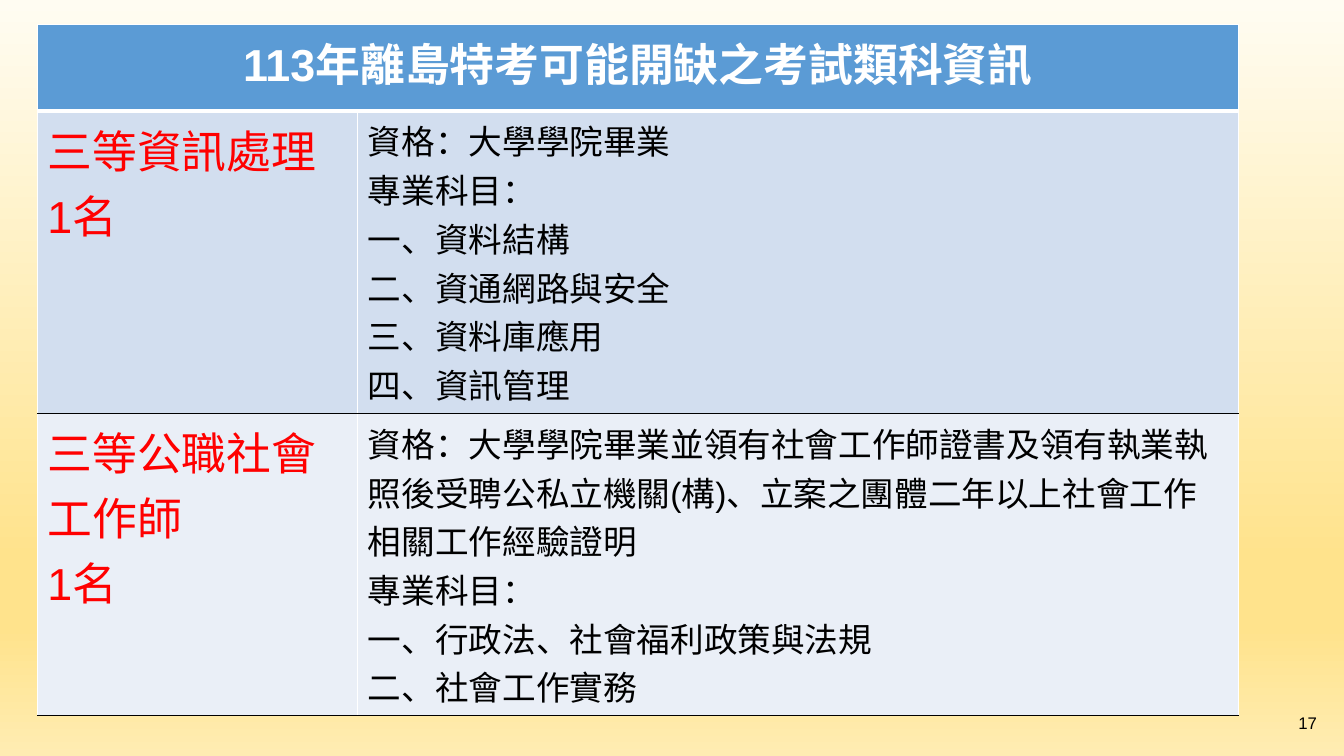
from dataclasses import dataclass

from lxml.etree import SubElement
from pptx import Presentation
from pptx.dml.color import RGBColor
from pptx.enum.text import MSO_ANCHOR, PP_ALIGN
from pptx.oxml import parse_xml
from pptx.oxml.ns import nsdecls, qn
from pptx.util import Inches, Pt


@dataclass(frozen=True)
class Theme:
    font: str = "Arial"
    heading_size: int = 32
    detail_size: int = 24
    number_size: int = 12
    white: str = "FFFFFF"
    black: str = "000000"
    red: str = "FF0000"
    header_fill: str = "5B9BD5"
    row_fills: tuple = ("D2DEEF", "EAEFF7")
    background: tuple = ((0, "FFFCF2"), (74, "FFE38C"), (83, "FFE38C"), (100, "FFECB2"))


TITLE = "113年離島特考可能開缺之考試類科資訊"
EXAMS = [
    (
        ["三等資訊處理", "1名"],
        ["資格：大學學院畢業", "專業科目：", "一、資料結構", "二、資通網路與安全",
         "三、資料庫應用", "四、資訊管理"],
    ),
    (
        ["三等公職社會工作師", "1名"],
        ["資格：大學學院畢業並領有社會工作師證書及領有執業執照後受聘公私立機關(構)、"
         "立案之團體二年以上社會工作相關工作經驗證明",
         "專業科目：", "一、行政法、社會福利政策與法規", "二、社會工作實務"],
    ),
]


class SlideBuilder:
    """Places elements on one slide; lengths are percentages of its size."""

    def __init__(self, presentation, theme):
        self.theme = theme
        self.width = presentation.slide_width
        self.height = presentation.slide_height
        self.slide = presentation.slides.add_slide(presentation.slide_layouts[6])

    def across(self, percent):
        return round(self.width * percent / 100)

    def down(self, percent):
        return round(self.height * percent / 100)

    def frame(self, left, top, width, height):
        return self.across(left), self.down(top), self.across(width), self.down(height)

    def background(self):
        fill = self.slide.background.fill
        fill.gradient()
        fill.gradient_angle = 270
        stops = next(self.slide.element.iter(qn("a:gsLst")))
        for stop in list(stops):
            stops.remove(stop)
        for position, color in self.theme.background:
            stop = SubElement(stops, qn("a:gs"), pos=str(position * 1000))
            SubElement(stop, qn("a:srgbClr"), val=color)

    def add_lines(self, text_frame, lines, size, color, align=PP_ALIGN.LEFT, bold=False):
        text_frame.word_wrap = True
        for index, line in enumerate(lines):
            paragraph = text_frame.add_paragraph() if index else text_frame.paragraphs[0]
            paragraph.alignment = align
            run = paragraph.add_run()
            run.text = line
            run.font.name = self.theme.font
            run.font.size = Pt(size)
            run.font.bold = bold
            run.font.color.rgb = RGBColor.from_string(color)

    def text(self, lines, frame, size, color, align):
        shape = self.slide.shapes.add_textbox(*self.frame(*frame))
        shape.text_frame.vertical_anchor = MSO_ANCHOR.MIDDLE
        self.add_lines(shape.text_frame, lines, size, color, align)

    def table(self, left, top, column_widths, row_heights):
        frame = self.frame(left, top, sum(column_widths), sum(row_heights))
        table = self.slide.shapes.add_table(
            len(row_heights), len(column_widths), *frame).table
        table.first_row = table.horz_banding = False
        for column, width in zip(table.columns, column_widths):
            column.width = self.across(width)
        for row, height in zip(table.rows, row_heights):
            row.height = self.down(height)
        return table

    def style_cell(self, cell, fill, top, bottom):
        """Fill a cell and border it; top and bottom are (color, points)."""
        cell.fill.solid()
        cell.fill.fore_color.rgb = RGBColor.from_string(fill)
        properties = cell._tc.get_or_add_tcPr()
        side = (self.theme.white, 1)
        borders = {"lnL": side, "lnR": side, "lnT": top, "lnB": bottom}
        for index, (tag, (color, points)) in enumerate(borders.items()):
            properties.insert(index, parse_xml(
                f'<a:{tag} {nsdecls("a")} w="{Pt(points)}"><a:solidFill>'
                f'<a:srgbClr val="{color}"/></a:solidFill></a:{tag}>'))

    def exam_table(self, title, exams):
        theme = self.theme
        table = self.table(2.78, 3.2, (23.85, 65.55), (11.47, 40, 40))
        thin_white, thick_white = (theme.white, 1), (theme.white, 3)
        rule = (theme.black, 1)

        for cell in table.rows[0].cells:
            self.style_cell(cell, theme.header_fill, thin_white, thick_white)
        header = table.cell(0, 0)
        header.merge(table.cell(0, 1))
        self.add_lines(header.text_frame, [title], theme.heading_size, theme.white,
                       PP_ALIGN.CENTER, bold=True)

        styles = ((theme.heading_size, theme.red), (theme.detail_size, theme.black))
        tops = (thick_white, rule)
        for row, (exam, fill, top) in enumerate(zip(exams, theme.row_fills, tops), 1):
            for column, (lines, style) in enumerate(zip(exam, styles)):
                cell = table.cell(row, column)
                self.style_cell(cell, fill, top, rule)
                self.add_lines(cell.text_frame, lines, *style)


def main():
    presentation = Presentation()
    presentation.slide_width = Inches(13.33)
    presentation.slide_height = Inches(7.5)
    theme = Theme()
    builder = SlideBuilder(presentation, theme)
    builder.background()
    builder.text(["17"], (88.45, 92.93, 10.28, 5.33), theme.number_size,
                 theme.black, PP_ALIGN.RIGHT)
    builder.exam_table(TITLE, EXAMS)
    presentation.save("out.pptx")


if __name__ == "__main__":
    main()
